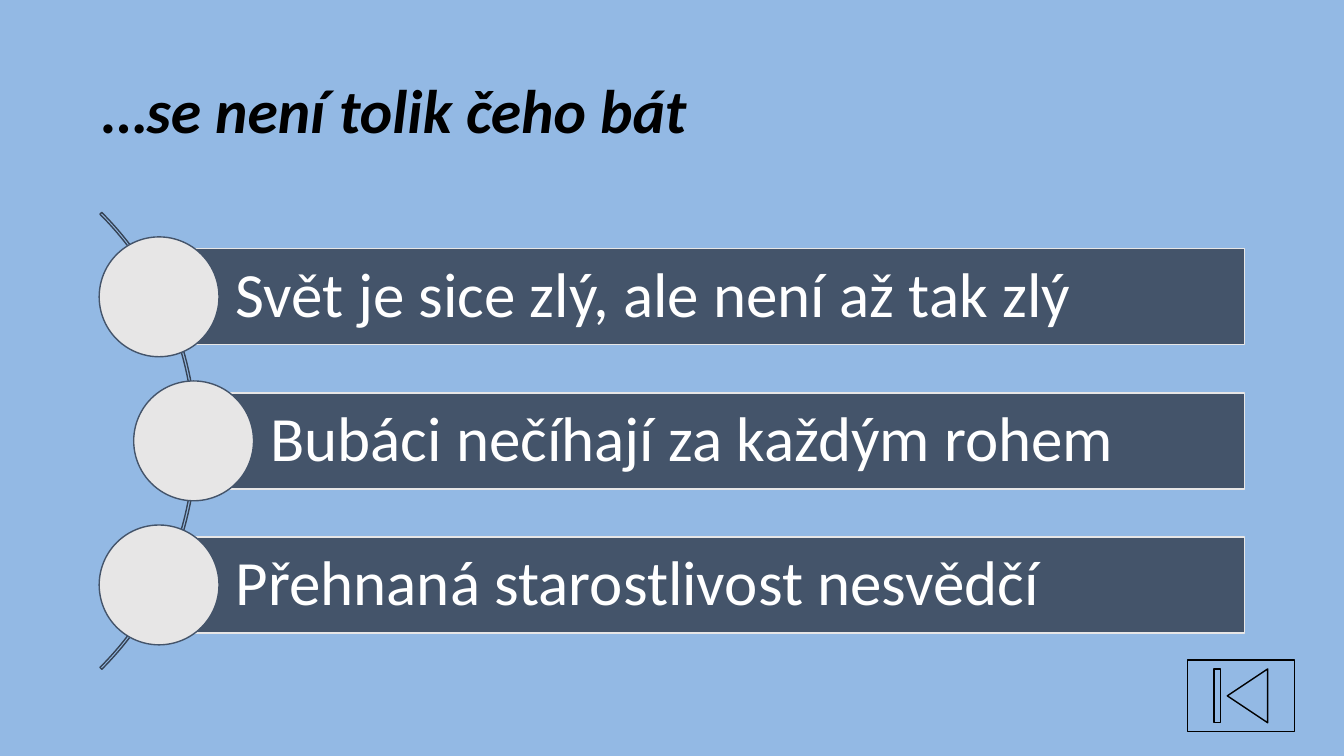
from dataclasses import dataclass

import pptx
import pptx.dml.color
import pptx.enum.shapes
import pptx.enum.text
import pptx.util

Cm = pptx.util.Cm
Pt = pptx.util.Pt
RGBColor = pptx.dml.color.RGBColor
Kind = pptx.enum.shapes.MSO_SHAPE

SKY = RGBColor(0x93, 0xB9, 0xE4)
SLATE = RGBColor(0x44, 0x54, 0x6A)
DARK_SLATE = RGBColor(0x36, 0x43, 0x55)
LIGHT_GREY = RGBColor(0xE7, 0xE6, 0xE6)
BLACK = RGBColor(0, 0, 0)
WHITE = RGBColor(0xFF, 0xFF, 0xFF)
FONT = "Calibri"

# Measurements in centimetres
LIST_MIDDLE = 11.11
ROW_PITCH = 3.63
BAR_HEIGHT = 2.42
BAR_RIGHT = 31.37
CIRCLE_SIZE = 3.02
ARC_SIZE = 16.28


@dataclass
class Item:
    text: str
    left: float


ITEMS = [
    Item("Svět je sice zlý, ale není až tak zlý", 4.01),
    Item("Bubáci nečíhají za každým rohem", 4.88),
    Item("Přehnaná starostlivost nesvědčí", 4.01),
]


def add_outlined(slide: pptx.slide.Slide, kind: Kind, left: float, top: float,
                 width: float, height: float, line: RGBColor,
                 fill: RGBColor | None = None) -> pptx.shapes.autoshape.Shape:
    shape = slide.shapes.add_shape(kind, Cm(left), Cm(top), Cm(width), Cm(height))
    shape.shadow.inherit = False
    if fill is None:
        shape.fill.background()
    else:
        shape.fill.solid()
        shape.fill.fore_color.rgb = fill
    shape.line.color.rgb = line
    shape.line.width = Pt(1)
    return shape


def format_text(shape: pptx.shapes.base.BaseShape, text: str, size: int,
                color: RGBColor, emphasis: bool = False) -> None:
    frame = shape.text_frame
    frame.text = text
    frame.word_wrap = True
    frame.auto_size = pptx.enum.text.MSO_AUTO_SIZE.NONE
    frame.vertical_anchor = pptx.enum.text.MSO_ANCHOR.MIDDLE
    paragraph = frame.paragraphs[0]
    paragraph.alignment = pptx.enum.text.PP_ALIGN.LEFT
    paragraph.line_spacing = 0.9
    paragraph.font.name = FONT
    paragraph.font.size = Pt(size)
    paragraph.font.bold = emphasis
    paragraph.font.italic = emphasis
    paragraph.font.color.rgb = color


def add_item(slide: pptx.slide.Slide, item: Item, middle: float) -> None:
    bar = add_outlined(slide, Kind.RECTANGLE, item.left, middle - BAR_HEIGHT / 2,
                       BAR_RIGHT - item.left, BAR_HEIGHT, LIGHT_GREY, SLATE)
    format_text(bar, item.text, 45, WHITE)
    frame = bar.text_frame
    frame.margin_left = Cm(1.93)
    frame.margin_top = frame.margin_right = frame.margin_bottom = Cm(0.3)
    add_outlined(slide, Kind.OVAL, item.left - CIRCLE_SIZE / 2, middle - CIRCLE_SIZE / 2,
                 CIRCLE_SIZE, CIRCLE_SIZE, SLATE, LIGHT_GREY)


def main() -> None:
    presentation = pptx.Presentation()
    presentation.slide_width = Cm(33.87)
    presentation.slide_height = Cm(19.05)
    slide = presentation.slides.add_slide(presentation.slide_layouts[5])
    slide.background.fill.solid()
    slide.background.fill.fore_color.rgb = SKY

    # Title
    title = slide.shapes.title
    title.left, title.top, title.width, title.height = Cm(2.34), Cm(1.02), Cm(29.21), Cm(3.68)
    format_text(title, "…se není tolik čeho bát", 44, BLACK, emphasis=True)

    # Arc behind the list
    arc = add_outlined(slide, Kind.BLOCK_ARC, -11.33, LIST_MIDDLE - ARC_SIZE / 2,
                       ARC_SIZE, ARC_SIZE, DARK_SLATE)
    for index, value in enumerate((189, 27, 0.004)):
        arc.adjustments[index] = value

    # List rows, spread evenly around the middle
    for row, item in enumerate(ITEMS):
        add_item(slide, item, LIST_MIDDLE + (row - (len(ITEMS) - 1) / 2) * ROW_PITCH)

    # Back-to-start button
    add_outlined(slide, Kind.ACTION_BUTTON_BEGINNING, 29.92, 16.63, 2.7, 1.81, BLACK)

    presentation.save("out.pptx")


if __name__ == "__main__":
    main()
